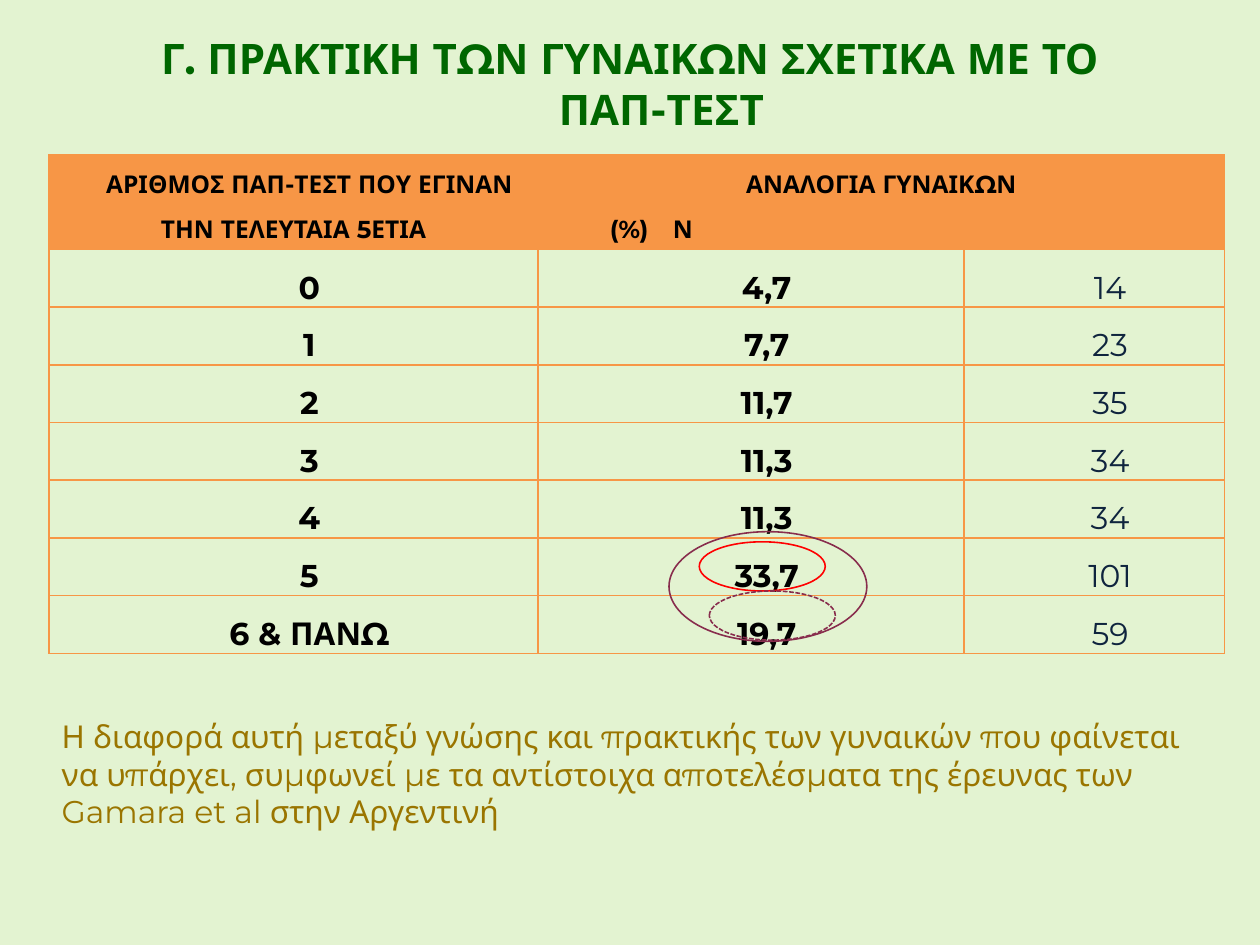
from lxml.etree import SubElement
from pptx import Presentation
from pptx.dml.color import RGBColor
from pptx.enum.dml import MSO_LINE_DASH_STYLE as Dash
from pptx.enum.shapes import MSO_SHAPE as Shape
from pptx.enum.text import MSO_ANCHOR as Anchor, MSO_AUTO_SIZE as AutoSize, PP_ALIGN as Align
from pptx.oxml.ns import qn
from pptx.util import Inches, Pt

FONT = "Montserrat"
GREEN, ORANGE, BLACK, NAVY = "006600", "F79646", "000000", "0F243E"
GOLD, RED, PLUM, PALE = "9A7500", "FF0000", "882D4D", "E3F3D1"

TITLE_LINES = ["Γ. ΠΡΑΚΤΙΚΗ ΤΩΝ ΓΥΝΑΙΚΩΝ ΣΧΕΤΙΚΑ ΜΕ ΤΟ", "ΠΑΠ-ΤΕΣΤ"]
TEST_HEADING = "ΑΡΙΘΜΟΣ ΠΑΠ-ΤΕΣΤ ΠΟΥ ΕΓΙΝΑΝ ΤΗΝ ΤΕΛΕΥΤΑΙΑ 5ΕΤΙΑ"
SHARE_HEADING = "ΑΝΑΛΟΓΙΑ ΓΥΝΑΙΚΩΝ"
ROWS = [
    ("0", "4,7", "14"),
    ("1", "7,7", "23"),
    ("2", "11,7", "35"),
    ("3", "11,3", "34"),
    ("4", "11,3", "34"),
    ("5", "33,7", "101"),
    ("6 & ΠΑΝΩ", "19,7", "59"),
]
NOTE = (
    "Η διαφορά αυτή μεταξύ γνώσης και πρακτικής των γυναικών που φαίνεται "
    "να υπάρχει, συμφωνεί με τα αντίστοιχα αποτελέσματα της έρευνας των "
    "Gamara et al στην Αργεντινή"
)


def set_color(color_format, value):
    color_format.rgb = RGBColor.from_string(value)


def set_fill(fill, value):
    fill.solid()
    set_color(fill.fore_color, value)


def place(shape, box):
    shape.left, shape.top, shape.width, shape.height = map(Inches, box)


def add_run(paragraph, text, size, color, bold=False):
    run = paragraph.add_run()
    run.text = text
    run.font.name = FONT
    run.font.size = Pt(size)
    run.font.bold = bold
    set_color(run.font.color, color)


def indent(paragraph, first_line):
    properties = paragraph._p.get_or_add_pPr()
    properties.set("marL", "0")
    properties.set("indent", str(Inches(first_line)))


def add_tabs(paragraph, positions):
    tab_list = SubElement(paragraph._p.get_or_add_pPr(), qn("a:tabLst"))
    for position in positions:
        SubElement(tab_list, qn("a:tab"), pos=str(Inches(position)), algn="l")


def add_title(slide, box):
    title = slide.shapes.title
    place(title, box)
    frame = title.text_frame
    frame.auto_size = AutoSize.NONE
    frame.vertical_anchor = Anchor.MIDDLE
    for number, line in enumerate(TITLE_LINES):
        paragraph = frame.add_paragraph() if number else frame.paragraphs[0]
        paragraph.alignment = Align.CENTER
        indent(paragraph, 0.5 * number)
        add_run(paragraph, line, 24, GREEN, True)


def format_cell(cell, fill=None):
    cell.margin_left = cell.margin_right = Inches(0.07)
    cell.margin_top = cell.margin_bottom = 0
    properties = cell._tc.get_or_add_tcPr()
    for side in ("lnL", "lnR", "lnT", "lnB"):
        line = SubElement(properties, qn(f"a:{side}"), w=str(Pt(1)))
        solid = SubElement(line, qn("a:solidFill"))
        SubElement(solid, qn("a:srgbClr"), val=ORANGE)
    if fill:
        set_fill(cell.fill, fill)
    else:
        cell.fill.background()


def format_paragraph(paragraph, alignment, first_line=0):
    paragraph.alignment = alignment
    paragraph.line_spacing = 1.5
    indent(paragraph, first_line)


def add_header(table):
    table.cell(0, 1).merge(table.cell(0, 2))
    for column in range(3):
        format_cell(table.cell(0, column), ORANGE)

    test_heading = table.cell(0, 0).text_frame.paragraphs[0]
    format_paragraph(test_heading, Align.CENTER, 0.25)
    add_run(test_heading, TEST_HEADING, 14, BLACK, True)

    frame = table.cell(0, 1).text_frame
    share_heading = frame.paragraphs[0]
    format_paragraph(share_heading, Align.CENTER)
    add_run(share_heading, SHARE_HEADING, 14, BLACK, True)

    units = frame.add_paragraph()
    format_paragraph(units, Align.LEFT)
    add_tabs(units, (1.3, 3.82))
    add_run(units, "\t(%)\tΝ", 14, BLACK, True)


def add_result_table(slide, box):
    shape = slide.shapes.add_table(len(ROWS) + 1, 3, *map(Inches, box))
    table = shape.table
    table.horz_banding = False
    for column, width in zip(table.columns, (3.88, 3.38, 2.07)):
        column.width = Inches(width)
    header_height = 0.75
    row_height = (box[3] - header_height) / len(ROWS)
    for number, row in enumerate(table.rows):
        row.height = Inches(row_height if number else header_height)
    add_header(table)
    for row, values in enumerate(ROWS, start=1):
        for column, value in enumerate(values):
            cell = table.cell(row, column)
            format_cell(cell)
            paragraph = cell.text_frame.paragraphs[0]
            format_paragraph(paragraph, Align.CENTER, 0.25)
            is_count = column == 2
            add_run(paragraph, value, 18, NAVY if is_count else BLACK, not is_count)


def add_ring(slide, box, color, dash=None):
    ring = slide.shapes.add_shape(Shape.OVAL, *map(Inches, box))
    ring.shadow.inherit = False
    ring.fill.background()
    set_color(ring.line.color, color)
    ring.line.width = Pt(0.9)
    if dash:
        ring.line.dash_style = dash


def add_note(slide, box):
    frame = slide.shapes.add_textbox(*map(Inches, box)).text_frame
    frame.word_wrap = True
    add_run(frame.paragraphs[0], NOTE, 18, GOLD)


def main():
    presentation = Presentation()
    presentation.slide_width = Inches(10)
    presentation.slide_height = Inches(7.5)
    slide = presentation.slides.add_slide(presentation.slide_layouts[5])
    set_fill(slide.background.fill, PALE)
    add_title(slide, (0, 0.21, 10, 0.9))
    add_result_table(slide, (0.39, 1.23, 9.33, 3.9))
    add_ring(slide, (5.55, 4.3, 1, 0.39), RED)
    add_ring(slide, (5.63, 4.69, 1, 0.39), PLUM, Dash.SQUARE_DOT)
    add_note(slide, (0.39, 5.64, 9.41, 1))
    add_ring(slide, (5.31, 4.22, 1.57, 0.87), PLUM)
    presentation.save("out.pptx")


if __name__ == "__main__":
    main()
